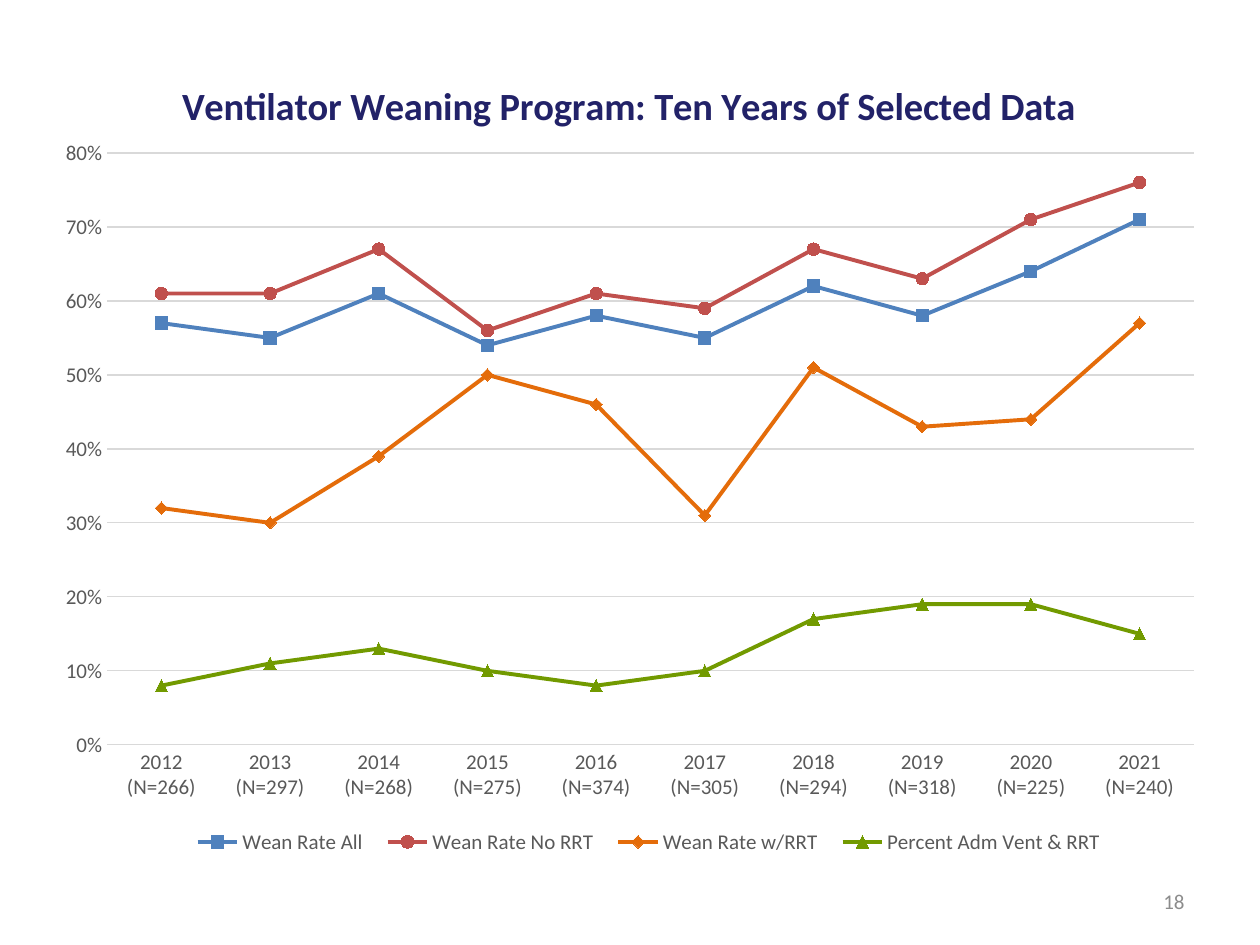
"""Build the ventilator weaning slide with its ten-year line chart."""
from dataclasses import dataclass

from pptx import Presentation
from pptx.chart.data import CategoryChartData
from pptx.dml.color import RGBColor
from pptx.enum.chart import XL_CHART_TYPE, XL_LEGEND_POSITION, XL_MARKER_STYLE, XL_TICK_MARK
from pptx.enum.text import MSO_ANCHOR, PP_ALIGN
from pptx.oxml import parse_xml
from pptx.oxml.ns import nsdecls, qn
from pptx.util import Emu, Pt

LINE_MARKERS = XL_CHART_TYPE.LINE_MARKERS
BOTTOM = XL_LEGEND_POSITION.BOTTOM
NO_TICK = XL_TICK_MARK.NONE
SQUARE, CIRCLE = XL_MARKER_STYLE.SQUARE, XL_MARKER_STYLE.CIRCLE
DIAMOND, TRIANGLE = XL_MARKER_STYLE.DIAMOND, XL_MARKER_STYLE.TRIANGLE
MIDDLE = MSO_ANCHOR.MIDDLE
CENTER, RIGHT = PP_ALIGN.CENTER, PP_ALIGN.RIGHT
PX_PER_INCH = 126


@dataclass(frozen=True)
class Theme:
    font: str = "Calibri"
    heading: str = "222268"
    label: str = "595959"
    grid: str = "D9D9D9"
    page: str = "8C8C8C"
    blue: str = "4F81BD"
    red: str = "C0504D"
    orange: str = "E46C0A"
    green: str = "729A00"
    heading_size: int = 22
    label_size: int = 12
    marker_size: int = 7
    grid_width: float = 0.75
    line_width: float = 2.25


@dataclass(frozen=True)
class Box:
    left: int
    top: int
    width: int
    height: int

    def emu(self) -> tuple:
        return tuple(map(px, (self.left, self.top, self.width, self.height)))


@dataclass(frozen=True)
class Rate:
    name: str
    percents: tuple
    color: str
    marker: int


THEME = Theme()
CHART_BOX = Box(42, 42, 1176, 819)
PLOT_BOX = Box(107, 153, 1087, 592)
HEADING_BOX = Box(175, 72, 893, 48)
LEGEND_BOX = Box(180, 824, 938, 36)
PAGE_BOX = Box(903, 876, 294, 50)
ADMISSIONS = (266, 297, 268, 275, 374, 305, 294, 318, 225, 240)
RATES = (
    Rate("Wean Rate All", (57, 55, 61, 54, 58, 55, 62, 58, 64, 71), THEME.blue, SQUARE),
    Rate("Wean Rate No RRT", (61, 61, 67, 56, 61, 59, 67, 63, 71, 76), THEME.red, CIRCLE),
    Rate("Wean Rate w/RRT", (32, 30, 39, 50, 46, 31, 51, 43, 44, 57), THEME.orange, DIAMOND),
    Rate("Percent Adm Vent & RRT", (8, 11, 13, 10, 8, 10, 17, 19, 19, 15), THEME.green, TRIANGLE),
)


def px(length: int) -> Emu:
    return Emu(round(length * 914400 / PX_PER_INCH))


def rgb(color: str) -> RGBColor:
    return RGBColor.from_string(color)


def style_font(font, *, size: int, color: str, bold: bool = False) -> None:
    font.name, font.size, font.bold = THEME.font, Pt(size), bold
    font.color.rgb = rgb(color)


def write_text(frame, text: str, *, size: int, color: str, bold: bool = False, align=CENTER) -> None:
    paragraph = frame.paragraphs[0]
    paragraph.alignment = align
    run = paragraph.add_run()
    run.text = text
    style_font(run.font, size=size, color=color, bold=bold)


def style_line(line, color: str, width: float) -> None:
    line.color.rgb = rgb(color)
    line.width = Pt(width)


def place(chart, tag: str, box: Box, index: int, *, sized: bool = True) -> None:
    part = next(chart._chartSpace.iter(qn(tag)))
    for previous in part.findall(qn("c:layout")):
        part.remove(previous)
    target = '<c:layoutTarget val="inner"/>' if tag == "c:plotArea" else ""
    fractions = {
        "x": (box.left - CHART_BOX.left) / CHART_BOX.width,
        "y": (box.top - CHART_BOX.top) / CHART_BOX.height,
    }
    if sized:
        fractions["w"] = box.width / CHART_BOX.width
        fractions["h"] = box.height / CHART_BOX.height
    modes = '<c:xMode val="edge"/><c:yMode val="edge"/>'
    values = "".join(f'<c:{key} val="{value:.4f}"/>' for key, value in fractions.items())
    part.insert(index, parse_xml(
        f'<c:layout {nsdecls("c")}><c:manualLayout>{target}{modes}{values}</c:manualLayout></c:layout>'
    ))


def style_series(series, rate: Rate) -> None:
    series.smooth = False
    style_line(series.format.line, rate.color, THEME.line_width)
    marker = series.marker
    marker.style, marker.size = rate.marker, THEME.marker_size
    marker.format.fill.solid()
    marker.format.fill.fore_color.rgb = rgb(rate.color)
    marker.format.line.color.rgb = rgb(rate.color)


def style_axes(chart) -> None:
    years, percents = chart.category_axis, chart.value_axis
    for axis in (years, percents):
        axis.major_tick_mark = axis.minor_tick_mark = NO_TICK
        style_font(axis.tick_labels.font, size=THEME.label_size, color=THEME.label)
    style_line(years.format.line, THEME.grid, THEME.grid_width)
    percents.format.line.fill.background()
    percents.minimum_scale, percents.maximum_scale, percents.major_unit = 0, 0.8, 0.1
    percents.tick_labels.number_format = "0%"
    percents.tick_labels.number_format_is_linked = False
    style_line(percents.major_gridlines.format.line, THEME.grid, THEME.grid_width)


def add_rates_chart(slide) -> None:
    rates_data = CategoryChartData(number_format="0%")
    rates_data.categories = [f"{year}\n(N={count})" for year, count in enumerate(ADMISSIONS, 2012)]
    for rate in RATES:
        rates_data.add_series(rate.name, [percent / 100 for percent in rate.percents])
    chart = slide.shapes.add_chart(LINE_MARKERS, *CHART_BOX.emu(), rates_data).chart
    style_font(chart.font, size=THEME.label_size, color=THEME.label)
    chart.plots[0].vary_by_categories = False
    for series, rate in zip(chart.plots[0].series, RATES):
        style_series(series, rate)
    style_axes(chart)
    write_text(chart.chart_title.text_frame, "Ventilator Weaning Program: Ten Years of Selected Data",
               size=THEME.heading_size, color=THEME.heading, bold=True)
    chart.has_legend = True
    chart.legend.position = BOTTOM
    chart.legend.include_in_layout = False
    style_font(chart.legend.font, size=THEME.label_size, color=THEME.label)
    place(chart, "c:title", HEADING_BOX, 1, sized=False)
    place(chart, "c:plotArea", PLOT_BOX, 0)
    place(chart, "c:legend", LEGEND_BOX, 1)


def add_page_number(slide) -> None:
    frame = slide.shapes.add_textbox(*PAGE_BOX.emu()).text_frame
    frame.word_wrap = True
    frame.vertical_anchor = MIDDLE
    write_text(frame, "18", size=THEME.label_size, color=THEME.page, align=RIGHT)


def main() -> None:
    deck = Presentation()
    deck.slide_width, deck.slide_height = px(1260), px(945)
    slide = deck.slides.add_slide(deck.slide_layouts[6])
    add_page_number(slide)
    add_rates_chart(slide)
    deck.save("out.pptx")


if __name__ == "__main__":
    main()
